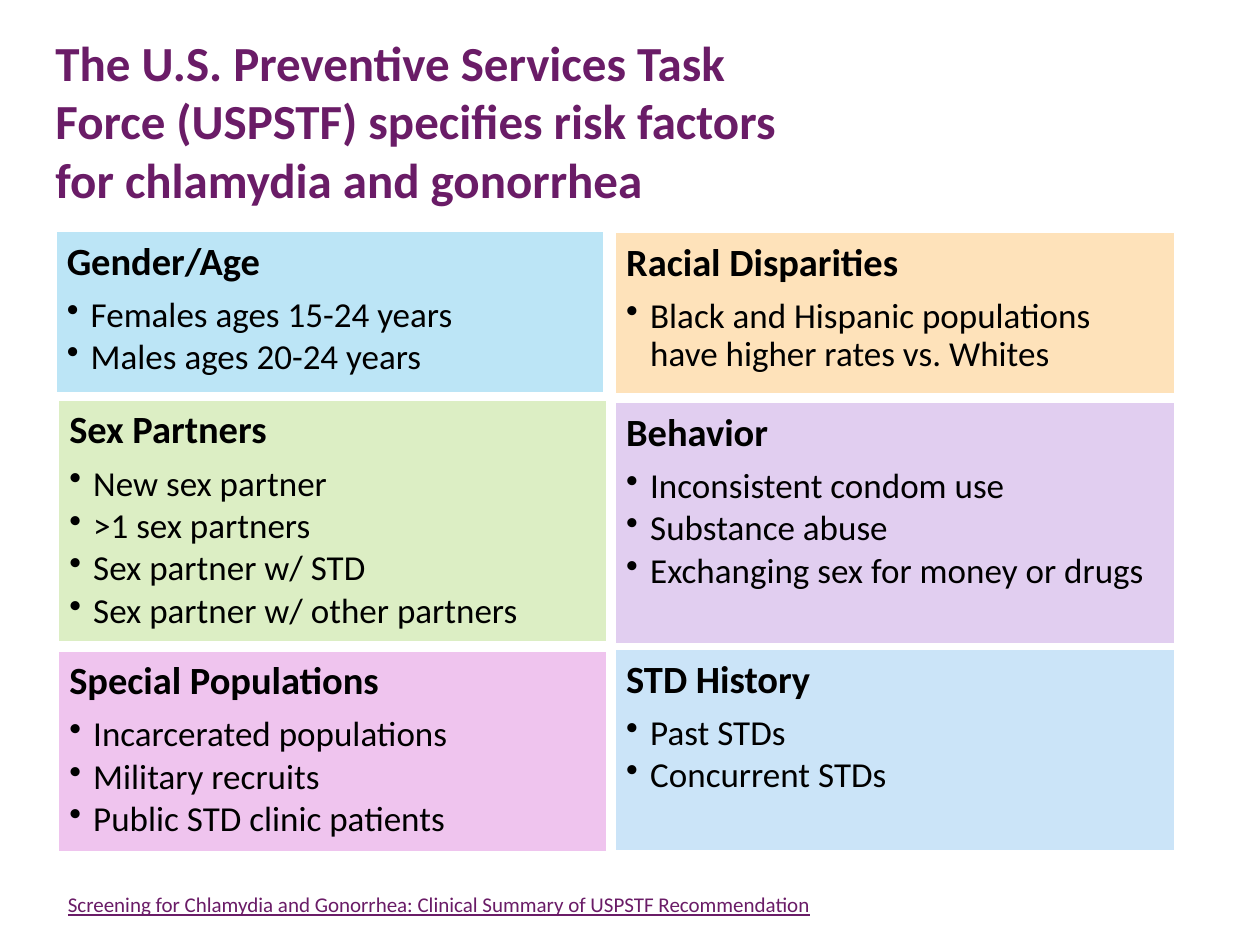
import pptx
import pptx.dml.color
import pptx.enum.shapes
import pptx.enum.text
import pptx.oxml.ns
import pptx.util
from lxml import etree

Inches = pptx.util.Inches
Pt = pptx.util.Pt
RGBColor = pptx.dml.color.RGBColor
ANCHOR = pptx.enum.text.MSO_ANCHOR

PURPLE = RGBColor(0x6A, 0x1C, 0x67)
BLACK = RGBColor(0, 0, 0)
WHITE = RGBColor(0xFF, 0xFF, 0xFF)
SKY = RGBColor(0xBC, 0xE5, 0xF6)
GREEN = RGBColor(0xDC, 0xEE, 0xC4)
PINK = RGBColor(0xEF, 0xC4, 0xEE)
ORANGE = RGBColor(0xFE, 0xE2, 0xBA)
LILAC = RGBColor(0xE1, 0xCE, 0xF0)
BLUE = RGBColor(0xCB, 0xE4, 0xF8)

LEFT_W, RIGHT_W = 4.36, 4.45
ROW_H = (1.29, 1.93, 1.61)

# Left, top, row, width, fill, heading, bullets
CARDS = [
    (0.44, 1.83, 0, LEFT_W, SKY, "Gender/Age",
     ["Females ages 15-24 years", "Males ages 20-24 years"]),
    (0.46, 3.17, 1, LEFT_W, GREEN, "Sex Partners",
     ["New sex partner", ">1 sex partners", "Sex partner w/ STD",
      "Sex partner w/ other partners"]),
    (0.46, 5.16, 2, LEFT_W, PINK, "Special Populations",
     ["Incarcerated populations", "Military recruits",
      "Public STD clinic patients"]),
    (4.88, 1.84, 0, RIGHT_W, ORANGE, "Racial Disparities",
     ["Black and Hispanic populations have higher rates vs. Whites"]),
    (4.88, 3.19, 1, RIGHT_W, LILAC, "Behavior",
     ["Inconsistent condom use", "Substance abuse",
      "Exchanging sex for money or drugs"]),
    (4.88, 5.15, 2, RIGHT_W, BLUE, "STD History",
     ["Past STDs", "Concurrent STDs"]),
]


class SlideBuilder:
    """Holds the text styles and the current slide."""

    title_font = {"size": Pt(28), "bold": True, "color": PURPLE}
    heading_font = {"size": Pt(22), "bold": True, "color": BLACK}
    bullet_font = {"size": Pt(20), "bold": False, "color": BLACK}
    source_font = {"size": Pt(12), "underline": True, "color": PURPLE}
    card_para = {"alignment": pptx.enum.text.PP_ALIGN.LEFT,
                 "line_spacing": 0.9, "space_before": Pt(0)}

    def __init__(self, prs):
        self.slide = prs.slides.add_slide(prs.slide_layouts[5])

    def apply(self, obj, values):
        for name, value in values.items():
            setattr(obj, name, value)

    def run(self, p, text, style):
        r = p.add_run()
        r.text = text
        r.font.name = "Calibri"
        r.font.color.rgb = style["color"]
        self.apply(r.font, {k: v for k, v in style.items() if k != "color"})

    def title(self, text, left, top, width, height):
        sp = self.slide.shapes.title
        self.apply(sp, {"left": Inches(left), "top": Inches(top),
                        "width": Inches(width), "height": Inches(height)})
        tf = sp.text_frame
        self.apply(tf, {"word_wrap": True, "vertical_anchor": ANCHOR.MIDDLE,
                        "auto_size": pptx.enum.text.MSO_AUTO_SIZE.NONE})
        p = tf.paragraphs[0]
        p.alignment = pptx.enum.text.PP_ALIGN.LEFT
        self.run(p, text, self.title_font)

    def bullet(self, p):
        pPr = p._p.get_or_add_pPr()
        pPr.set("marL", str(Inches(0.19)))
        pPr.set("indent", str(-Inches(0.19)))
        bu = etree.SubElement(pPr, pptx.oxml.ns.qn("a:buChar"))
        bu.set("char", "•")

    def card(self, left, top, row, width, fill, heading, bullets):
        sp = self.slide.shapes.add_shape(
            pptx.enum.shapes.MSO_SHAPE.RECTANGLE, Inches(left), Inches(top),
            Inches(width), Inches(ROW_H[row]))
        sp.shadow.inherit = False
        sp.fill.solid()
        sp.fill.fore_color.rgb = fill
        sp.line.color.rgb = WHITE
        sp.line.width = Pt(1.75)
        tf = sp.text_frame
        self.apply(tf, {"word_wrap": True, "vertical_anchor": ANCHOR.TOP})
        self.apply(tf, {f"margin_{side}": Inches(0.09)
                        for side in ("left", "top", "right", "bottom")})
        p = tf.paragraphs[0]
        self.apply(p, {**self.card_para, "space_after": Pt(7.7)})
        self.run(p, heading, self.heading_font)
        for text in bullets:
            p = tf.add_paragraph()
            self.bullet(p)
            self.apply(p, {**self.card_para, "level": 1, "space_after": Pt(2.6)})
            self.run(p, text, self.bullet_font)

    def source(self, text, left, top, width, height):
        sp = self.slide.shapes.add_textbox(
            Inches(left), Inches(top), Inches(width), Inches(height))
        tf = sp.text_frame
        tf.word_wrap = True
        self.run(tf.paragraphs[0], text, self.source_font)


def main():
    prs = pptx.Presentation()
    prs.slide_width, prs.slide_height = Inches(10), Inches(7.5)
    s = SlideBuilder(prs)

    # Title
    s.title("The U.S. Preventive Services Task Force (USPSTF) specifies "
            "risk factors for chlamydia and gonorrhea", 0.34, 0.33, 6.25, 1.25)

    # Risk factor cards
    for card in CARDS:
        s.card(*card)

    # Source line
    s.source("Screening for Chlamydia and Gonorrhea: Clinical Summary of "
             "USPSTF Recommendation", 0.44, 7.03, 6.89, 0.3)

    prs.save("out.pptx")


if __name__ == "__main__":
    main()
